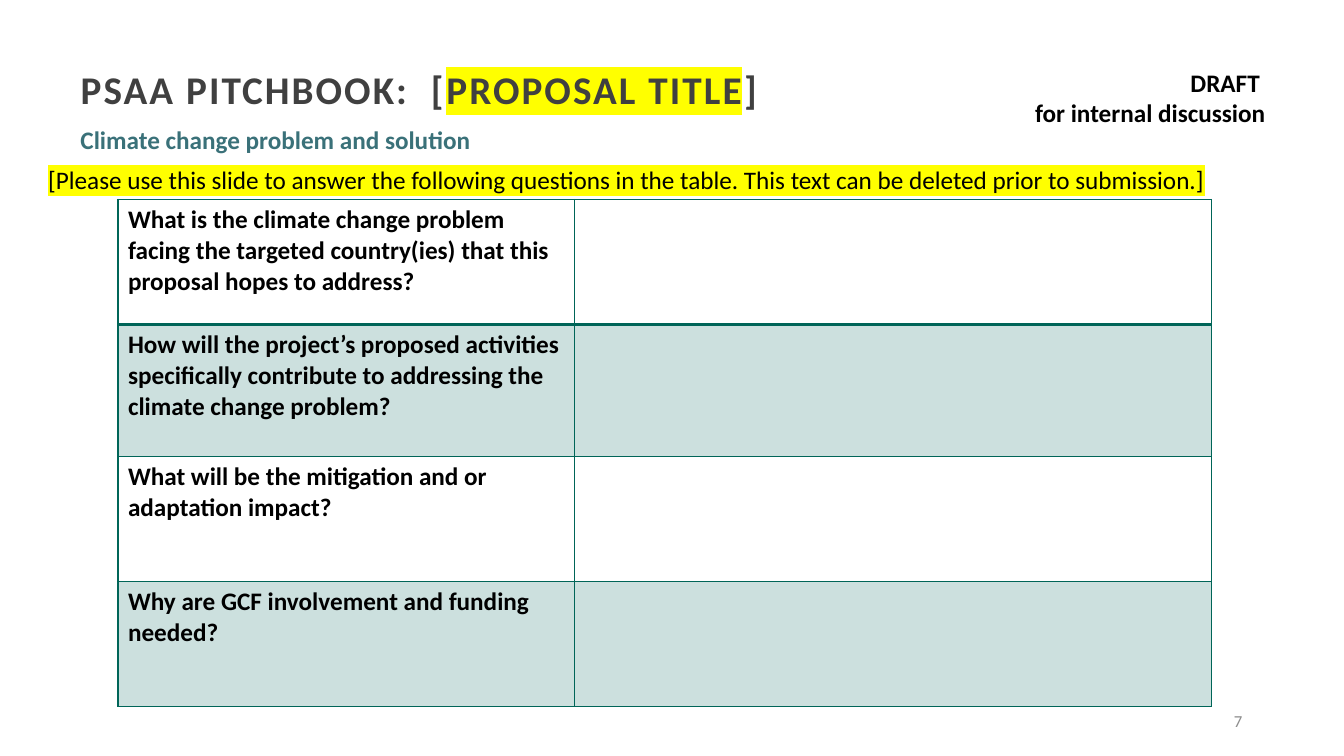
from dataclasses import dataclass

from lxml.etree import SubElement
from pptx import Presentation
from pptx.dml.color import RGBColor
from pptx.enum.shapes import MSO_SHAPE
from pptx.enum.text import MSO_ANCHOR, MSO_AUTO_SIZE, PP_ALIGN
from pptx.oxml.ns import qn
from pptx.util import Inches, Pt


@dataclass(frozen=True)
class Theme:
    """Colours, font and type sizes of the slide."""

    font: str = "Calibri"
    black: str = "000000"
    white: str = "FFFFFF"
    title: str = "404040"
    subtitle: str = "3A7179"
    number: str = "8C8C8C"
    highlight: str = "FFFF00"
    border: str = "006558"
    band: str = "CCE0DE"
    title_size: int = 28
    body_size: int = 18
    number_size: int = 12


THEME = Theme()

QUESTIONS = [
    "What is the climate change problem facing the targeted country(ies) that this proposal hopes to address?",
    "How will the project’s proposed activities specifically contribute to addressing the climate change problem?",
    "What will be the mitigation and or adaptation impact?",
    "Why are GCF involvement and funding needed?",
]
COLUMN_WIDTHS = [4.53, 6.32]
ROW_HEIGHTS = [1.24, 1.31, 1.24, 1.24]


def apply_format(target, values):
    """Set each attribute in values on the target."""
    for name, value in values.items():
        setattr(target, name, value)


def add_run(paragraph, text, color=THEME.black, size=THEME.body_size,
            bold=False, highlight=None, spacing=None):
    """Add one formatted run to a paragraph."""
    run = paragraph.add_run()
    run.text = text
    run.font.color.rgb = RGBColor.from_string(color)
    properties = run.font._element
    if highlight:
        mark = SubElement(properties, qn("a:highlight"))
        SubElement(mark, qn("a:srgbClr"), val=highlight)
    if spacing:
        properties.set("spc", str(int(spacing * 100)))
    apply_format(run.font, {"name": THEME.font, "size": Pt(size), "bold": bold})


def format_frame(shape, anchor=MSO_ANCHOR.TOP):
    """Make the text of a shape wrap at a fixed size."""
    apply_format(shape.text_frame, {
        "word_wrap": True, "auto_size": MSO_AUTO_SIZE.NONE, "vertical_anchor": anchor,
    })


def add_text(slide, box, lines, align=PP_ALIGN.LEFT, anchor=MSO_ANCHOR.TOP, **style):
    """Add a text box with one paragraph per line."""
    shape = slide.shapes.add_textbox(*map(Inches, box))
    format_frame(shape, anchor)
    frame = shape.text_frame
    for index, line in enumerate(lines):
        paragraph = frame.add_paragraph() if index else frame.paragraphs[0]
        paragraph.alignment = align
        add_run(paragraph, line, **style)


def add_title(slide):
    """Fill and place the title placeholder."""
    title = slide.shapes.title
    apply_format(title, {
        "left": Inches(0.7), "top": Inches(0.65),
        "width": Inches(10.1), "height": Inches(0.61),
    })
    format_frame(title)
    paragraph = title.text_frame.paragraphs[0]
    apply_format(paragraph, {"alignment": PP_ALIGN.LEFT, "line_spacing": 0.9})
    for text, highlight in [("PSAA PITCHBOOK:  [", None),
                            ("PROPOSAL TITLE", THEME.highlight), ("]", None)]:
        add_run(paragraph, text, THEME.title, THEME.title_size, True, highlight, 1.5)


def add_subtitle(slide, text):
    """Add the white subtitle bar."""
    bar = slide.shapes.add_shape(
        MSO_SHAPE.RECTANGLE, Inches(0.7), Inches(1.18), Inches(5.97), Inches(0.4))
    bar.shadow.inherit = False
    bar.fill.solid()
    bar.fill.fore_color.rgb = RGBColor.from_string(THEME.white)
    bar.line.fill.background()
    format_frame(bar)
    paragraph = bar.text_frame.paragraphs[0]
    paragraph.alignment = PP_ALIGN.LEFT
    add_run(paragraph, text, color=THEME.subtitle, bold=True)


def format_cell(cell, widths, fill):
    """Draw the four borders of a cell and fill it."""
    properties = cell._tc.get_or_add_tcPr()
    for side, width in widths.items():
        line = SubElement(properties, qn(f"a:ln{side}"), w=str(Pt(width)))
        paint = SubElement(line, qn("a:solidFill"))
        SubElement(paint, qn("a:srgbClr"), val=THEME.border)
    cell.fill.solid()
    cell.fill.fore_color.rgb = RGBColor.from_string(fill)


def add_question_table(slide):
    """Add the table of questions with empty answer cells."""
    table = slide.shapes.add_table(
        len(QUESTIONS), len(COLUMN_WIDTHS), Inches(1.17), Inches(1.98),
        Inches(sum(COLUMN_WIDTHS)), Inches(sum(ROW_HEIGHTS))).table
    apply_format(table, {"first_row": False, "horz_banding": False})
    for column, width in zip(table.columns, COLUMN_WIDTHS):
        column.width = Inches(width)
    for index, (row, height) in enumerate(zip(table.rows, ROW_HEIGHTS)):
        row.height = Inches(height)
        widths = {"L": 1, "R": 1, "T": 2 if index == 1 else 1, "B": 2 if index == 0 else 1}
        for cell in row.cells:
            format_cell(cell, widths, THEME.band if index % 2 else THEME.white)
        add_run(row.cells[0].text_frame.paragraphs[0], QUESTIONS[index], bold=True)


def main():
    """Build and save the slide."""
    presentation = Presentation()
    apply_format(presentation, {"slide_width": Inches(13.33), "slide_height": Inches(7.5)})
    slide = presentation.slides.add_slide(presentation.slide_layouts[5])
    add_text(slide, (5.83, 0.62, 6.82, 0.71), ["DRAFT ", "for internal discussion"],
             PP_ALIGN.RIGHT, bold=True)
    add_text(slide, (9.42, 6.95, 3, 0.4), ["7"], PP_ALIGN.RIGHT, MSO_ANCHOR.MIDDLE,
             color=THEME.number, size=THEME.number_size)
    add_title(slide)
    add_text(slide, (0.38, 1.58, 12.57, 0.4),
             ["[Please use this slide to answer the following questions in the table. "
              "This text can be deleted prior to submission.]"],
             highlight=THEME.highlight)
    add_question_table(slide)
    add_subtitle(slide, "Climate change problem and solution")
    presentation.save("out.pptx")


if __name__ == "__main__":
    main()
